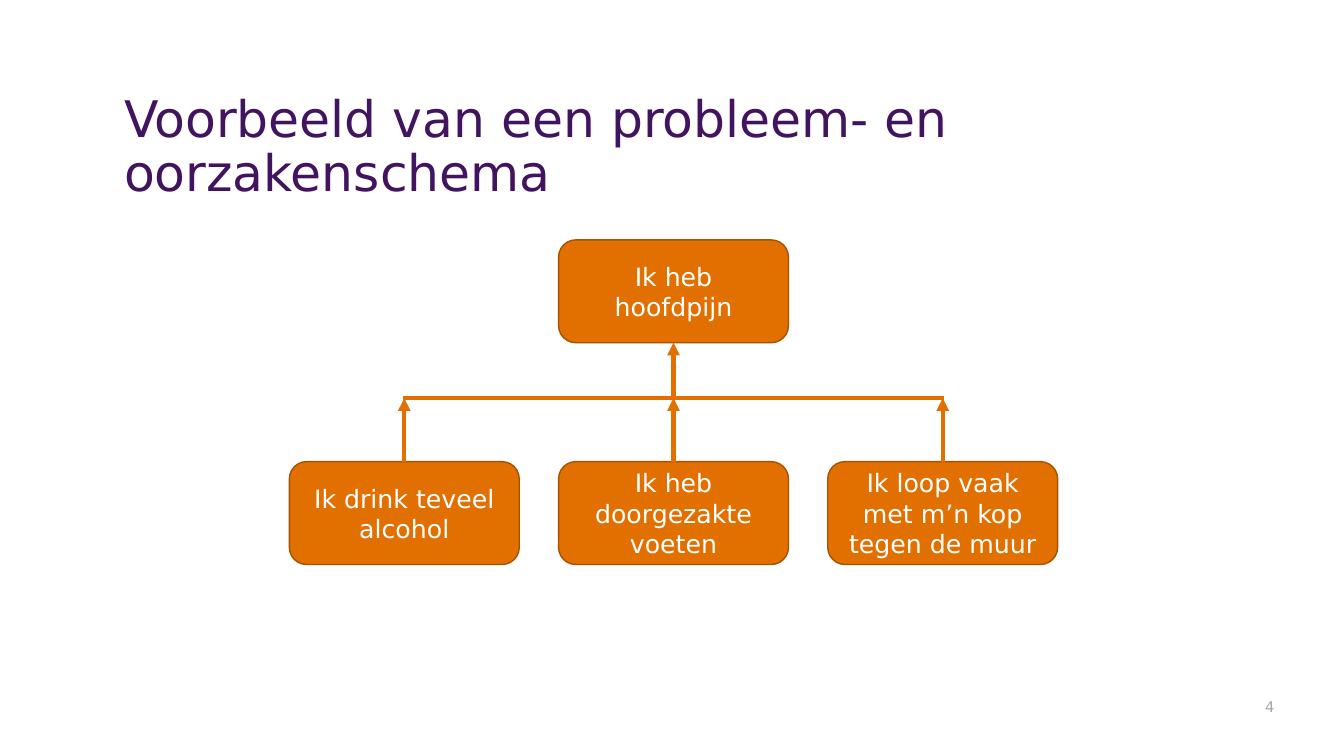
import pptx
import pptx.util
import pptx.dml.color
import pptx.enum.shapes
import pptx.enum.text
import pptx.oxml.ns
import lxml.etree

Inches = pptx.util.Inches
Pt = pptx.util.Pt
RGBColor = pptx.dml.color.RGBColor
ALIGN = pptx.enum.text.PP_ALIGN
ANCHOR = pptx.enum.text.MSO_ANCHOR

PURPLE = RGBColor(0x42, 0x14, 0x5F)
ORANGE = RGBColor(0xE1, 0x70, 0x00)
BROWN = RGBColor(0xA6, 0x53, 0x00)
GREY = RGBColor(0xA6, 0xA6, 0xA6)
WHITE = RGBColor(0xFF, 0xFF, 0xFF)

FONT = "DejaVu Sans"
PROBLEM = "Ik heb hoofdpijn"
CAUSES = [
    "Ik drink teveel alcohol",
    "Ik heb doorgezakte voeten",
    "Ik loop vaak met m’n kop tegen de muur",
]


def write(tf, text, size, color, para, frame):
    """Fill a text frame with one formatted paragraph."""
    p = tf.paragraphs[0]
    r = p.add_run()
    r.text = text
    r.font.color.rgb = color
    formats = [
        (tf, {"word_wrap": True, "auto_size": pptx.enum.text.MSO_AUTO_SIZE.NONE, **frame}),
        (p, para),
        (r.font, {"name": FONT, "size": Pt(size)}),
    ]
    for target, values in formats:
        for name, value in values.items():
            setattr(target, name, value)


def add_title(s, x, y, w, h):
    """Place the slide title in the given box."""
    sp = s.shapes.title
    sp.left, sp.top, sp.width, sp.height = (Inches(v) for v in (x, y, w, h))
    write(sp.text_frame, "Voorbeeld van een probleem- en oorzakenschema", 36, PURPLE,
          {"line_spacing": 0.9, "alignment": ALIGN.LEFT},
          {"vertical_anchor": ANCHOR.BOTTOM})


def add_box(s, text, x, y, w, h):
    """Add one rounded box of the scheme."""
    kind = pptx.enum.shapes.MSO_SHAPE.ROUNDED_RECTANGLE
    sp = s.shapes.add_shape(kind, *(Inches(v) for v in (x, y, w, h)))
    sp.shadow.inherit = False
    sp.fill.solid()
    sp.fill.fore_color.rgb = ORANGE
    sp.line.color.rgb = BROWN
    sp.line.width = Pt(1)
    write(sp.text_frame, text, 18, WHITE,
          {"alignment": ALIGN.CENTER}, {"vertical_anchor": ANCHOR.MIDDLE})


def add_line(s, x1, y1, x2, y2, arrow=True):
    """Add a straight orange line, with an arrowhead at its end if asked."""
    kind = pptx.enum.shapes.MSO_CONNECTOR.STRAIGHT
    line = s.shapes.add_connector(kind, *(Inches(v) for v in (x1, y1, x2, y2)))
    line.line.color.rgb = ORANGE
    line.line.width = Pt(3)
    qn = pptx.oxml.ns.qn
    if arrow:
        ln = line.line._get_or_add_ln()
        lxml.etree.SubElement(ln, qn("a:tailEnd"), type="triangle")
    lxml.etree.SubElement(line._element.spPr, qn("a:effectLst"))


def add_scheme(s, x, y, w, h):
    """Draw the problem on top of its causes, joined by arrows and a bar."""
    box_w, box_h = 2.28, 1.02
    step = (w - box_w) / (len(CAUSES) - 1)
    mid, bar_y, cause_y = x + w / 2, y + 1.57, y + h - box_h
    centers = [x + box_w / 2 + i * step for i in range(len(CAUSES))]
    add_box(s, PROBLEM, mid - box_w / 2, y, box_w, box_h)
    for text, cx in zip(CAUSES, centers):
        add_box(s, text, cx - box_w / 2, cause_y, box_w, box_h)
        add_line(s, cx, cause_y, cx, bar_y)
    add_line(s, centers[0] - 0.01, bar_y, centers[-1] + 0.01, bar_y, arrow=False)
    add_line(s, mid, bar_y, mid, y + box_h)


def add_page_number(s, x, y, w, h):
    """Place the page number at the right of the given box."""
    sp = s.shapes.add_textbox(*(Inches(v) for v in (x, y, w, h)))
    write(sp.text_frame, "4", 10.5, GREY, {"alignment": ALIGN.RIGHT},
          {"vertical_anchor": ANCHOR.BOTTOM, "margin_right": 0})


def main():
    """Build and save the presentation."""
    prs = pptx.Presentation()
    prs.slide_width, prs.slide_height = Inches(13.33), Inches(7.5)
    s = prs.slides.add_slide(prs.slide_layouts[5])
    add_title(s, 1.13, 0.92, 9, 1.14)
    add_scheme(s, 2.87, 2.38, 7.62, 3.22)
    add_page_number(s, 7.17, 6.8, 5.47, 0.35)
    prs.save("out.pptx")


if __name__ == "__main__":
    main()
